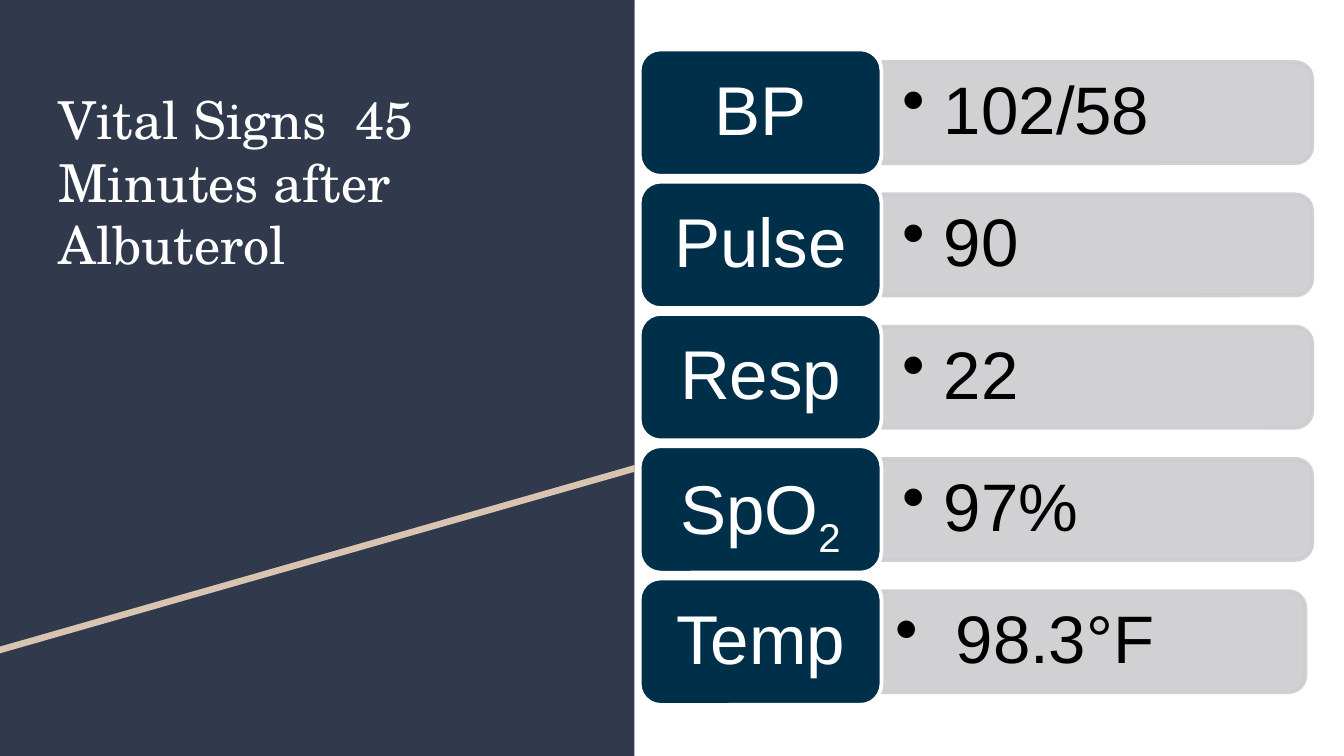
from lxml import etree
from pptx import Presentation
from pptx.dml.color import RGBColor
from pptx.enum.shapes import MSO_SHAPE
from pptx.enum.text import MSO_ANCHOR, PP_ALIGN
from pptx.oxml.ns import qn
from pptx.util import Cm, Pt

RECT = MSO_SHAPE.RECTANGLE
ROUNDED = MSO_SHAPE.ROUNDED_RECTANGLE
ROUND_TOP = MSO_SHAPE.ROUND_2_SAME_RECTANGLE
TOP, MIDDLE = MSO_ANCHOR.TOP, MSO_ANCHOR.MIDDLE
LEFT, CENTER = PP_ALIGN.LEFT, PP_ALIGN.CENTER

COLORS = {"panel": "31394D", "stripe": "D9C4B1", "label": "002F4A",
          "bar": "CCCDD0", "white": "FFFFFF", "black": "000000"}
TITLE = {"name": "TeX Gyre Schola", "size": Pt(28)}
LABEL = {"name": "Arial", "size": Pt(37)}
VALUE = {"name": "Arial", "size": Pt(36)}


def paint(sp, fill, line=None):
    sp.shadow.inherit = False
    sp.fill.solid()
    sp.fill.fore_color.rgb = RGBColor.from_string(COLORS[fill])
    if line:
        sp.line.color.rgb = RGBColor.from_string(COLORS[line])
        sp.line.width = Pt(2)
    else:
        sp.line.fill.background()


def write(sp, runs, font, color, inset, anchor=MIDDLE, align=LEFT, spacing=0.9):
    tf = sp.text_frame
    frame = {"word_wrap": True, "vertical_anchor": anchor,
             "margin_left": Cm(inset[0]), "margin_right": Cm(inset[0]),
             "margin_top": Cm(inset[1]), "margin_bottom": Cm(inset[1])}
    for key, value in frame.items():
        setattr(tf, key, value)
    p = tf.paragraphs[0]
    p.alignment, p.line_spacing = align, spacing
    for text in runs:
        r = p.add_run()
        r.text = text
        for key, value in font.items():
            setattr(r.font, key, value)
        r.font.color.rgb = RGBColor.from_string(COLORS[color])
    return p


prs = Presentation()
prs.slide_width, prs.slide_height = Cm(25.4), Cm(14.29)
s = prs.slides.add_slide(prs.slide_layouts[6])

# Left panel with a slanted stripe
panel_w = 11.99
paint(s.shapes.add_shape(RECT, 0, 0, Cm(panel_w), prs.slide_height), "panel")
for color, top in (("stripe", 0.13), ("panel", 0)):
    fb = s.shapes.build_freeform(0, Cm(top))
    fb.add_line_segments([(Cm(panel_w), Cm(top)), (Cm(panel_w), Cm(top + 8.79)),
                          (0, Cm(top + 12.22))], close=True)
    paint(fb.convert_to_shape(), color)

# Title
sp = s.shapes.add_textbox(Cm(0.86), Cm(1.4), Cm(10.29), Cm(6.96))
write(sp, ["Vital Signs  45 Minutes after Albuterol"], TITLE, "white",
      (0.25, 0.25), anchor=TOP, spacing=1.0)

# Vital signs: label runs, value, horizontal shift of the bar
rows = [(["BP"], "102/58", 0),
        (["Pulse"], "90", 0),
        (["Resp"], "22", 0),
        (["SpO", "2"], "97%", 0),
        (["Temp"], " 98.3°F", -0.13)]
pitch, first_middle = 2.5, 2.13
bar_w, bar_h = 8.13, 1.91
label_w, label_h = 4.57, 2.39
value_w, value_h = 8.03, 1.73

for i, (label, value, shift) in enumerate(rows):
    middle = first_middle + i * pitch
    left = 16.67 + shift

    # Bar, turned so that its round corners face right
    sp = s.shapes.add_shape(ROUND_TOP, Cm(left + (bar_w - bar_h) / 2),
                            Cm(middle - bar_w / 2), Cm(bar_h), Cm(bar_w))
    sp.rotation = 90
    paint(sp, "bar", "bar")
    for clr in sp._element.spPr.iter(qn("a:srgbClr")):
        etree.SubElement(clr, qn("a:alpha")).set("val", "90000")

    # Value with bullet
    sp = s.shapes.add_textbox(Cm(left), Cm(middle - value_h / 2),
                              Cm(value_w), Cm(value_h))
    p = write(sp, [value], VALUE, "black", (0.38, 0.18))
    pPr = p._p.get_or_add_pPr()
    pPr.set("marL", str(Cm(0.79)))
    pPr.set("indent", str(-Cm(0.79)))
    etree.SubElement(pPr, qn("a:buChar")).set("char", "•")

    # Label
    sp = s.shapes.add_shape(ROUNDED, Cm(12.09), Cm(middle - label_h / 2),
                            Cm(label_w), Cm(label_h))
    paint(sp, "label", "white")
    p = write(sp, label, LABEL, "white", (0.38, 0.2), align=CENTER)
    for r in p.runs[1:]:
        r.font._element.set("baseline", "-25000")

prs.save("out.pptx")
